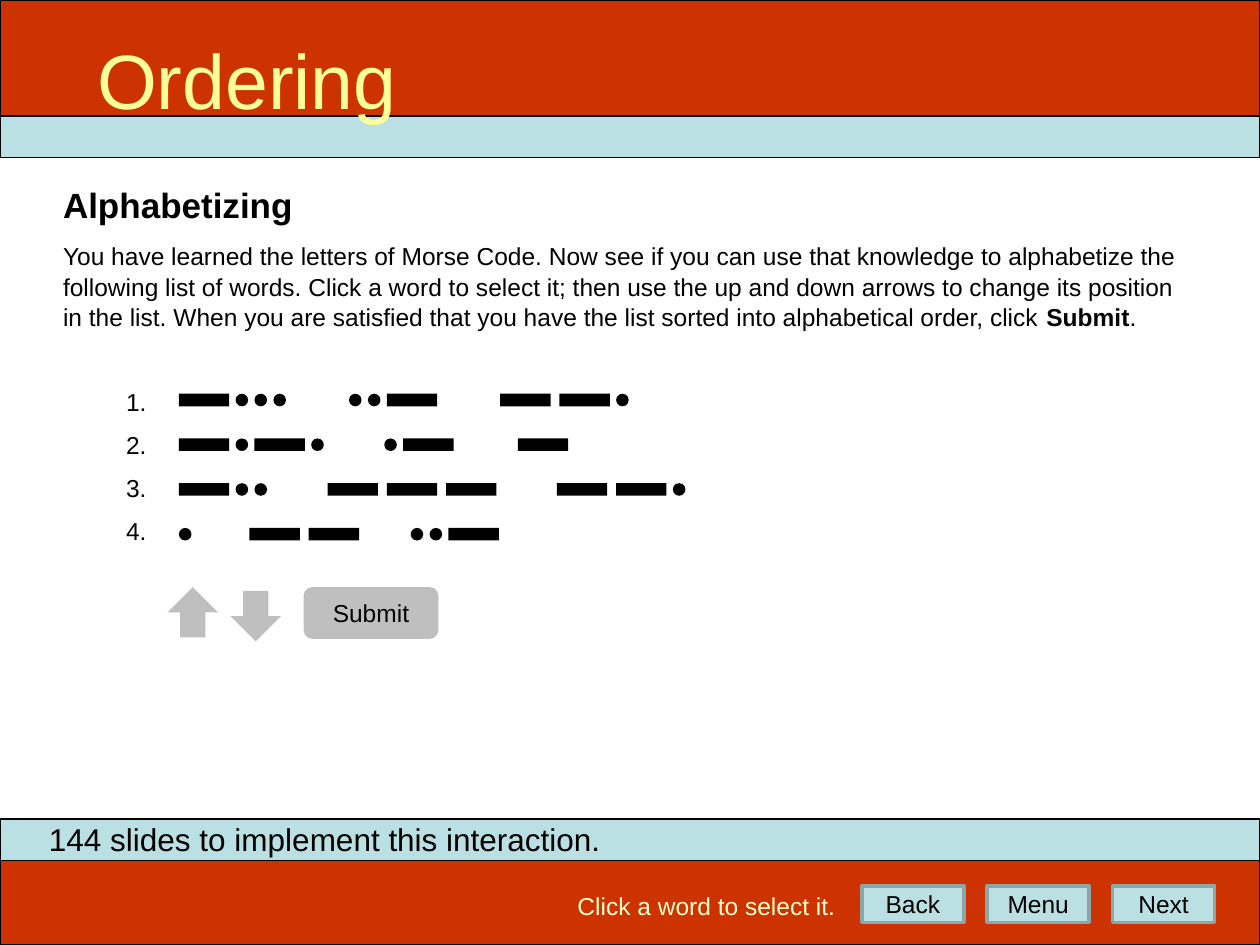
import pptx
import pptx.util
import pptx.dml.color
import pptx.enum.shapes
import pptx.enum.text
import lxml.etree
import pptx.oxml.ns

SHAPE = pptx.enum.shapes.MSO_SHAPE
ALIGN = pptx.enum.text.PP_ALIGN
ANCHOR = pptx.enum.text.MSO_ANCHOR
COLORS = {
    "red": "CC3300", "aqua": "BBE0E3", "aqua_edge": "8AA6A8", "grey": "BFBFBF",
    "black": "000000", "cream": "FFFFCC", "yellow": "FFFF99",
}
COLUMNS, ROWS = 100, 75


class Board:
    """Draws on one slide; places are columns and rows of a 100 x 75 grid."""
    font = "Arial"

    def __init__(self, deck):
        self.column = deck.slide_width / COLUMNS
        self.row = deck.slide_height / ROWS
        self.slide = deck.slides.add_slide(deck.slide_layouts[5])

    def place(self, left, top, width, height):
        return (round(left * self.column), round(top * self.row),
                round(width * self.column), round(height * self.row))

    def color(self, name):
        return pptx.dml.color.RGBColor.from_string(COLORS[name])

    def run(self, paragraph, words, size=14, color="black", bold=False):
        run = paragraph.add_run()
        run.text = words
        run.font.name = self.font
        run.font.size = pptx.util.Pt(size)
        run.font.bold = bold
        run.font.color.rgb = self.color(color)

    def frame(self, frame, inset=1, anchor=ANCHOR.TOP):
        frame.word_wrap = True
        frame.auto_size = pptx.enum.text.MSO_AUTO_SIZE.NONE
        frame.vertical_anchor = anchor
        frame.margin_left = frame.margin_right = round(inset * self.column)
        frame.margin_top = frame.margin_bottom = round(0.5 * self.row)
        return frame.paragraphs[0]

    def title(self, words, *box):
        title = self.slide.shapes.title
        title.left, title.top, title.width, title.height = self.place(*box)
        paragraph = self.frame(title.text_frame, anchor=ANCHOR.MIDDLE)
        paragraph.alignment = ALIGN.LEFT
        self.run(paragraph, words, 44, "yellow")
        # Bring the title in front of the bands
        title.element.getparent().append(title.element)

    def text(self, *box, inset=1, align=ALIGN.LEFT):
        label = self.slide.shapes.add_textbox(*self.place(*box))
        paragraph = self.frame(label.text_frame, inset)
        paragraph.alignment = align
        return label.text_frame, paragraph

    def shape(self, kind, fill, *box, edge=None, weight=0.75):
        shape = self.slide.shapes.add_shape(kind, *self.place(*box))
        shape.shadow.inherit = False
        shape.fill.solid()
        shape.fill.fore_color.rgb = self.color(fill)
        if edge:
            shape.line.color.rgb = self.color(edge)
            shape.line.width = pptx.util.Pt(weight)
        else:
            shape.line.fill.background()
        return shape

    def button(self, words, kind, fill, *box, **border):
        button = self.shape(kind, fill, *box, **border)
        paragraph = self.frame(button.text_frame, 0, ANCHOR.MIDDLE)
        button.text_frame.margin_top = button.text_frame.margin_bottom = 0
        paragraph.alignment = ALIGN.CENTER
        self.run(paragraph, words)

    def number(self, paragraph, left, hanging):
        properties = paragraph._p.get_or_add_pPr()
        properties.set("marL", str(round(left * self.column)))
        properties.set("indent", str(round(-hanging * self.column)))
        lxml.etree.SubElement(properties, pptx.oxml.ns.qn("a:buAutoNum"),
                              type="arabicPeriod")

    def morse(self, code, left, top):
        for sign, following in zip(code, code[1:] + " "):
            dash = sign == "-"
            width = 4 if dash else 1
            self.shape(SHAPE.RECTANGLE if dash else SHAPE.OVAL, "black",
                       left, top, width, 1)
            left += width + (0.7 if sign + following == "--" else 0.5)


def main():
    deck = pptx.Presentation()
    deck.slide_width = pptx.util.Inches(10)
    deck.slide_height = pptx.util.Inches(7.5)
    board = Board(deck)

    # Header and footer bands
    for fill, top, height in (("red", 0, 9.2), ("red", 68.3, 6.7),
                              ("aqua", 65, 3.3), ("aqua", 9.2, 3.3)):
        board.shape(SHAPE.RECTANGLE, fill, 0, top, COLUMNS, height, edge="black")
    board.title("Ordering", 6.7, 0, 90, 12.5)

    # Heading, instructions and numbered list
    _, heading = board.text(5, 14.1, 66.9, 4.4, inset=0)
    board.run(heading, "Alphabetizing", 20, bold=True)

    body, instructions = board.text(5, 18.5, 89.2, 25.6, inset=0)
    instructions.line_spacing = 1.05
    board.run(instructions, "You have learned the letters of Morse Code. Now see if "
              "you can use that knowledge to alphabetize the following list of words. "
              "Click a word to select it; then use the up and down arrows to change its "
              "position in the list. When you are satisfied that you have the list "
              "sorted into alphabetical order, click ")
    board.run(instructions, "Submit", bold=True)
    board.run(instructions, ".")

    # Each word: its Morse letters with their starting columns
    words = (
        (("-...", 14.2), ("..-", 27.7), ("--.", 39.7)),
        (("-.-.", 14.2), (".-", 30.5), ("-", 41.1)),
        (("-..", 14.2), ("---", 26), ("--.", 44.2)),
        ((".", 14.2), ("--", 19.8), ("..-", 32.6)),
    )
    for index, letters in enumerate(words):
        item = body.add_paragraph()
        item.line_spacing = 1.05
        item.space_before = pptx.util.Pt(7 if index else 30.7)
        board.number(item, 8.8, 3.8)
        board.run(item, " ")
        for code, left in letters:
            board.morse(code, left, 31.25 + 3.55 * index)

    # Sorting controls
    board.shape(SHAPE.UP_ARROW, "grey", 13.3, 46.6, 4, 4)
    board.shape(SHAPE.DOWN_ARROW, "grey", 18.3, 46.9, 4, 4)
    board.button("Submit", SHAPE.ROUNDED_RECTANGLE, "grey", 24.1, 46.6, 10.7, 4.1)

    # Footer note, prompt and navigation
    _, note = board.text(2.9, 64.6, 54.9, 4)
    board.run(note, "144 slides to implement this interaction.", 18)
    _, prompt = board.text(0, 70.2, 67.3, 3.4, align=ALIGN.RIGHT)
    board.run(prompt, "Click a word to select it.", color="cream")
    for index, target in enumerate(("Back", "Menu", "Next")):
        board.button(target, SHAPE.RECTANGLE, "aqua", 68.4 + 9.95 * index, 70.3,
                     8.1, 2.9, edge="aqua_edge", weight=2)

    deck.save("out.pptx")


if __name__ == "__main__":
    main()
